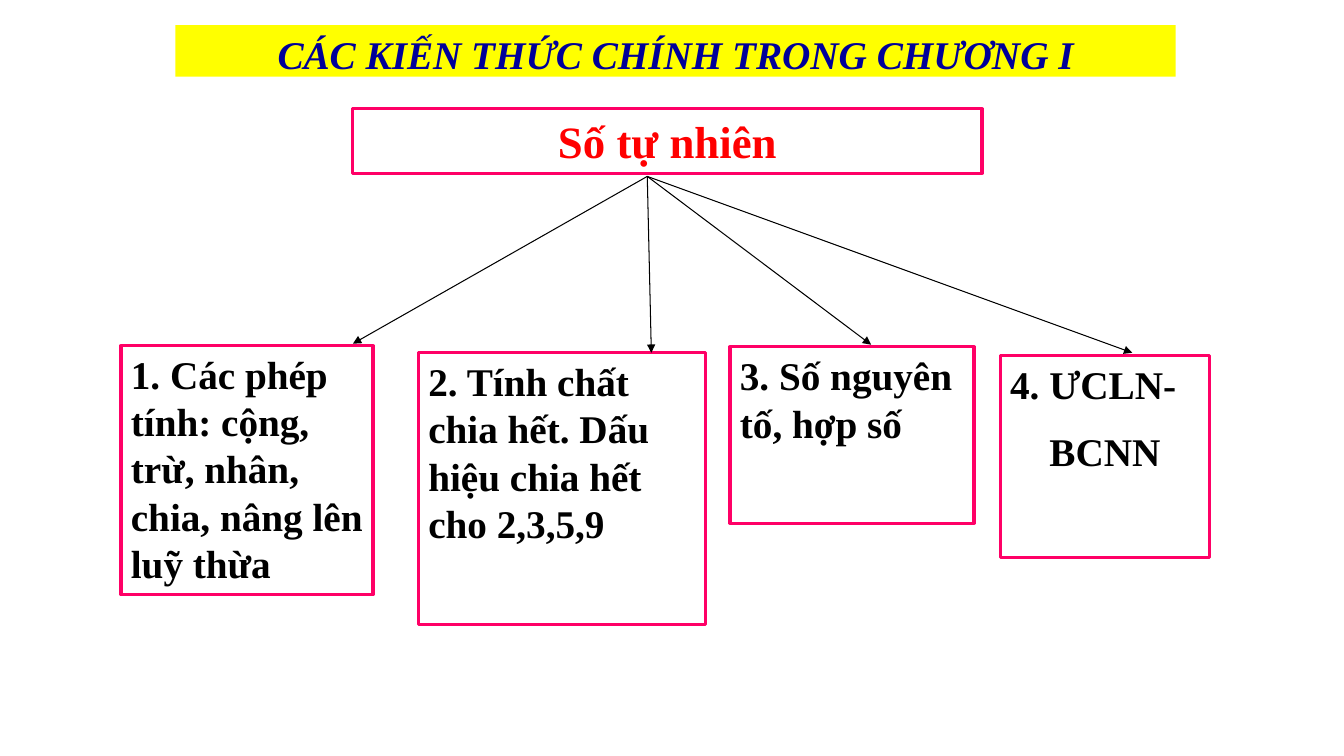
import pptx
import pptx.util
import pptx.dml.color
import pptx.enum.shapes
import pptx.enum.text
from lxml import etree
from pptx.oxml.ns import qn

Inches = pptx.util.Inches
Pt = pptx.util.Pt
Align = pptx.enum.text.PP_ALIGN

FONT = "Times New Roman"
NAVY, YELLOW, PINK, RED, BLACK = "000099", "FFFF00", "FF0066", "FF0000", "000000"

TITLE = "CÁC KIẾN THỨC CHÍNH TRONG CHƯƠNG I"
TITLE_AREA = (1.74, 0.25, 9.92, 0.51)
ROOT = "Số tự nhiên"
ROOT_AREA = (3.5, 1.08, 6.24, 0.64)

# Paragraphs, then left, top, width, height
TOPICS = [
    (["1. Các phép tính: cộng, trừ, nhân, chia, nâng lên luỹ thừa"], (1.2, 3.43, 2.5, 2.47)),
    (["2. Tính chất chia hết. Dấu hiệu chia hết cho 2,3,5,9"], (4.15, 3.5, 2.85, 2.7)),
    (["3. Số nguyên tố, hợp số"], (7.24, 3.44, 2.42, 1.75)),
    (["4. ƯCLN-", "BCNN"], (9.92, 3.53, 2.08, 2)),
]
ARROW_START = (6.42, 1.75)
ARROW_ENDS = [(3.5, 3.41), (6.46, 3.5), (8.64, 3.42), (11.23, 3.5)]
SECOND_LINE_INDENT = 0.39


def rgb(value):
    return pptx.dml.color.RGBColor.from_string(value)


def place(shape, area):
    shape.left, shape.top, shape.width, shape.height = map(Inches, area)


def write(shape, lines, size, color, align):
    """Fill a shape with bold paragraphs; later ones are spaced and indented."""
    frame = shape.text_frame
    frame.text = "\n".join(lines)
    frame.word_wrap = True
    frame.auto_size = pptx.enum.text.MSO_AUTO_SIZE.NONE
    frame.vertical_anchor = pptx.enum.text.MSO_ANCHOR.TOP
    for index, para in enumerate(frame.paragraphs):
        para.alignment = align
        para.font.name = FONT
        para.font.size = Pt(size)
        para.font.bold = True
        para.font.color.rgb = rgb(color)
        if index:
            para.space_before = Pt(size / 2)
            para._p.get_or_add_pPr().set("marL", str(Inches(SECOND_LINE_INDENT)))


def add_box(page, lines, area, size, color, align):
    box = page.shapes.add_shape(
        pptx.enum.shapes.MSO_SHAPE.RECTANGLE, *map(Inches, area))
    box.shadow.inherit = False
    box.fill.background()
    box.line.color.rgb = rgb(PINK)
    box.line.width = Pt(2.25)
    write(box, lines, size, color, align)


def add_arrow(page, start, end):
    arrow = page.shapes.add_connector(
        pptx.enum.shapes.MSO_CONNECTOR.STRAIGHT, *map(Inches, start + end))
    arrow.line.color.rgb = rgb(BLACK)
    arrow.line.width = Pt(0.75)
    etree.SubElement(arrow.line._get_or_add_ln(), qn("a:tailEnd"), type="triangle")
    etree.SubElement(arrow._element.spPr, qn("a:effectLst"))


def main():
    deck = pptx.Presentation()
    deck.slide_width, deck.slide_height = Inches(13.33), Inches(7.5)
    page = deck.slides.add_slide(deck.slide_layouts[5])

    title = page.shapes.title
    place(title, TITLE_AREA)
    title.fill.solid()
    title.fill.fore_color.rgb = rgb(YELLOW)
    write(title, [TITLE], 28, NAVY, Align.CENTER)
    title.text_frame.word_wrap = False
    title.text_frame.paragraphs[0].font.italic = True

    add_box(page, [ROOT], ROOT_AREA, 32, RED, Align.CENTER)
    for lines, area in TOPICS:
        add_box(page, lines, area, 28, BLACK, Align.LEFT)
    for end in ARROW_ENDS:
        add_arrow(page, ARROW_START, end)

    deck.save("out.pptx")


if __name__ == "__main__":
    main()
